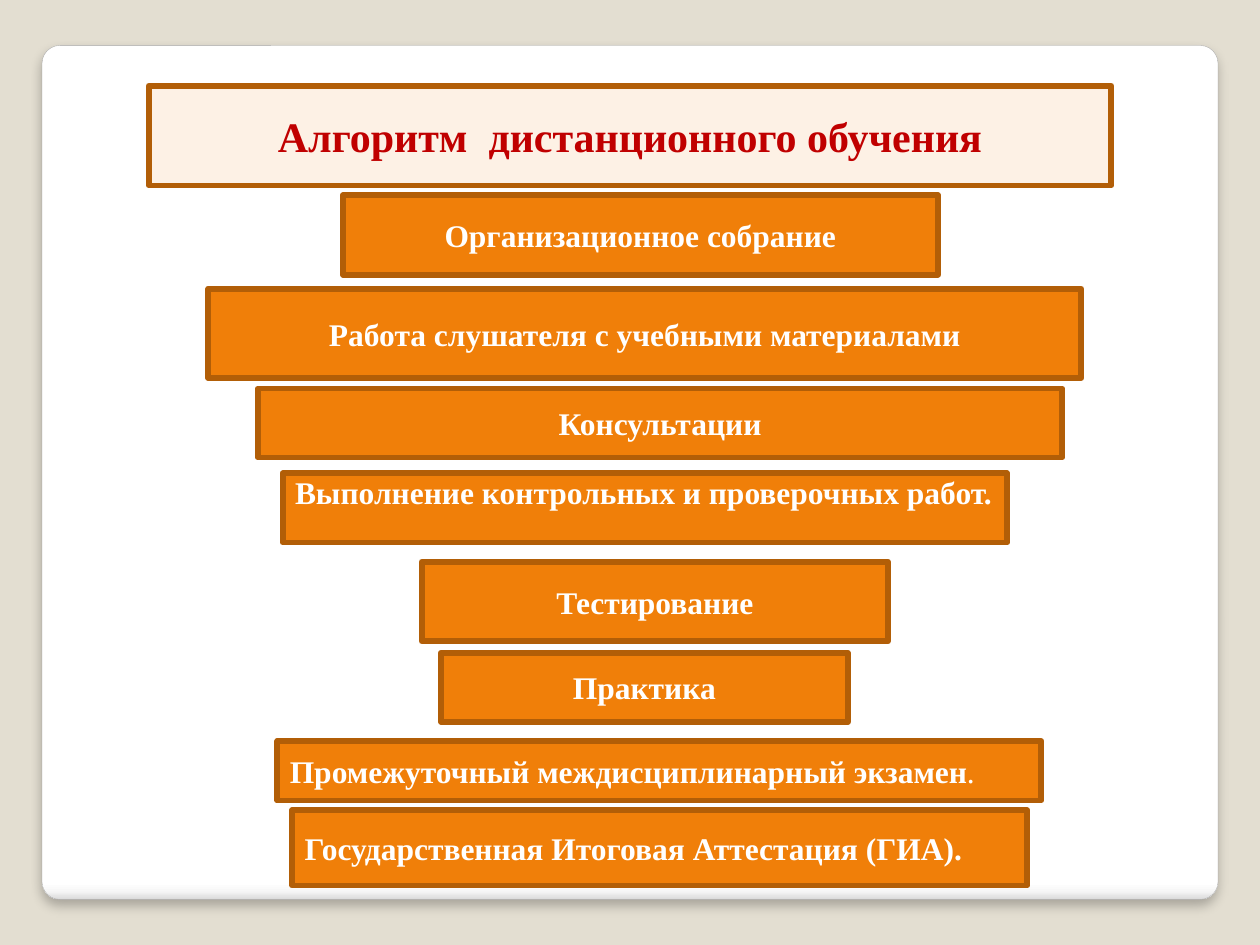
import copy

import lxml.etree
import pptx
import pptx.dml.color
import pptx.enum.shapes
import pptx.enum.text
import pptx.oxml
import pptx.oxml.ns
import pptx.util

Pt = pptx.util.Pt
ALIGN = pptx.enum.text.PP_ALIGN
ANCHOR = pptx.enum.text.MSO_ANCHOR
FONT = "Times New Roman"
ORANGE, BROWN, WHITE, RED = "F07F09", "B25E07", "FFFFFF", "C00000"
PANEL_BOX = (24, 26, 672, 488)
TITLE_BOX = (61, 23, 550, 57)
PANEL_STOPS = [(0, WHITE), (0.98, WHITE), (0.99, "F7F7F7"), (1, "DADADA")]
CENTERED_STEPS = [
    ("Организационное собрание", (172, 85.5, 340, 45.5)),
    ("Работа слушателя с учебными материалами", (95, 139, 499, 51)),
    ("Консультации", (123.5, 196, 459.5, 39.5)),
    ("Тестирование", (217, 295, 266.5, 45.5)),
    ("Практика", (228, 347, 232.5, 39.5)),
]
CONTROL_WORK = ("Выполнение контрольных и проверочных работ.", (137.5, 244.5, 414, 39.5))
EXAM = ("Промежуточный междисциплинарный экзамен", (134.5, 397.5, 436.5, 34))
FINAL_ATTESTATION = ("Государственная Итоговая Аттестация (ГИА).", (143, 437, 420, 43))


def color(value):
    return pptx.dml.color.RGBColor.from_string(value)


def inside(area, box):
    left, top, width, height = box
    return area[0] + left, area[1] + top, width, height


def paint(shape, fill, line, line_width):
    shape.fill.solid()
    shape.fill.fore_color.rgb = color(fill)
    shape.line.color.rgb = color(line)
    shape.line.width = Pt(line_width)


def add_run(paragraph, text, size, font_color, bold=True, italic=False):
    run = paragraph.add_run()
    run.text = text
    run.font.name = FONT
    run.font.size = Pt(size)
    run.font.bold = bold
    run.font.italic = italic
    run.font.color.rgb = color(font_color)


def add_panel(slide, box):
    kind = pptx.enum.shapes.MSO_SHAPE.ROUNDED_RECTANGLE
    panel = slide.shapes.add_shape(kind, *map(Pt, box))
    panel.adjustments[0] = 0.021
    paint(panel, WHITE, "A4A4A4", 0.16)
    panel.fill.gradient()
    panel.fill.gradient_angle = 270
    stop_list = panel.fill.gradient_stops[0]._gs.getparent()
    for _ in range(2):
        stop_list.append(copy.deepcopy(stop_list[-1]))
    for stop, (position, value) in zip(panel.fill.gradient_stops, PANEL_STOPS):
        stop.position = position
        stop.color.rgb = color(value)
    panel.shadow.inherit = False
    effects = panel._element.spPr.find(pptx.oxml.ns.qn("a:effectLst"))
    effects.append(pptx.oxml.parse_xml(
        f'<a:outerShdw {pptx.oxml.ns.nsdecls("a")} blurRad="{Pt(6)}" dist="{Pt(4)}" '
        'dir="5400000" algn="t" rotWithShape="0">'
        '<a:srgbClr val="000000"><a:alpha val="25000"/></a:srgbClr></a:outerShdw>'
    ))
    slide.shapes._spTree.insert(2, panel._element)


def fill_title(slide, area):
    title = slide.shapes.title
    title.left, title.top, title.width, title.height = map(Pt, inside(area, TITLE_BOX))
    paint(title, ORANGE, BROWN, 3.35)
    fill_color = title._element.spPr.find(".//" + pptx.oxml.ns.qn("a:srgbClr"))
    lxml.etree.SubElement(fill_color, pptx.oxml.ns.qn("a:alpha"), val="10000")
    frame = title.text_frame
    frame.auto_size = pptx.enum.text.MSO_AUTO_SIZE.NONE
    frame.vertical_anchor = ANCHOR.MIDDLE
    paragraph = frame.paragraphs[0]
    paragraph.alignment = ALIGN.CENTER
    add_run(paragraph, "Алгоритм  дистанционного обучения", 24, RED)


def add_step(slide, area, text, box, alignment=ALIGN.CENTER):
    kind = pptx.enum.shapes.MSO_SHAPE.RECTANGLE
    step = slide.shapes.add_shape(kind, *map(Pt, inside(area, box)))
    step.shadow.inherit = False
    paint(step, ORANGE, BROWN, 3.35)
    frame = step.text_frame
    frame.word_wrap = True
    frame.vertical_anchor = ANCHOR.MIDDLE
    paragraph = frame.paragraphs[0]
    paragraph.alignment = alignment
    add_run(paragraph, text, 18, WHITE)
    return frame


def add_steps(slide, area):
    for text, box in CENTERED_STEPS:
        add_step(slide, area, text, box)
    control_frame = add_step(slide, area, *CONTROL_WORK, ALIGN.JUSTIFY)
    control_frame.vertical_anchor = ANCHOR.TOP
    control_frame.margin_top = control_frame.margin_right = 0
    exam_frame = add_step(slide, area, *EXAM, ALIGN.LEFT)
    add_run(exam_frame.paragraphs[0], ".", 18, WHITE, bold=False, italic=True)
    add_step(slide, area, *FINAL_ATTESTATION, ALIGN.JUSTIFY)


def main():
    presentation = pptx.Presentation()
    presentation.slide_width, presentation.slide_height = Pt(720), Pt(540)
    slide = presentation.slides.add_slide(presentation.slide_layouts[5])
    slide.background.fill.solid()
    slide.background.fill.fore_color.rgb = color("E3DED1")
    add_panel(slide, PANEL_BOX)
    fill_title(slide, PANEL_BOX)
    add_steps(slide, PANEL_BOX)
    presentation.save("out.pptx")


if __name__ == "__main__":
    main()
